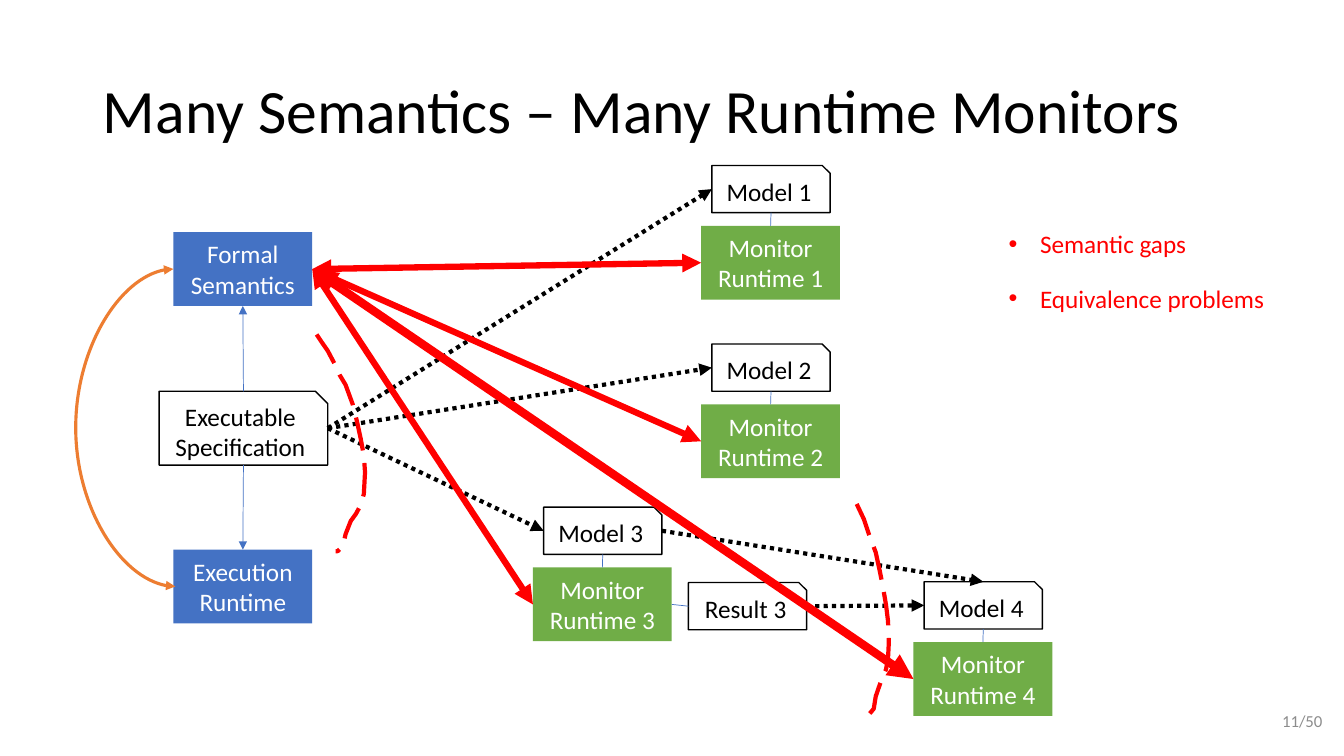
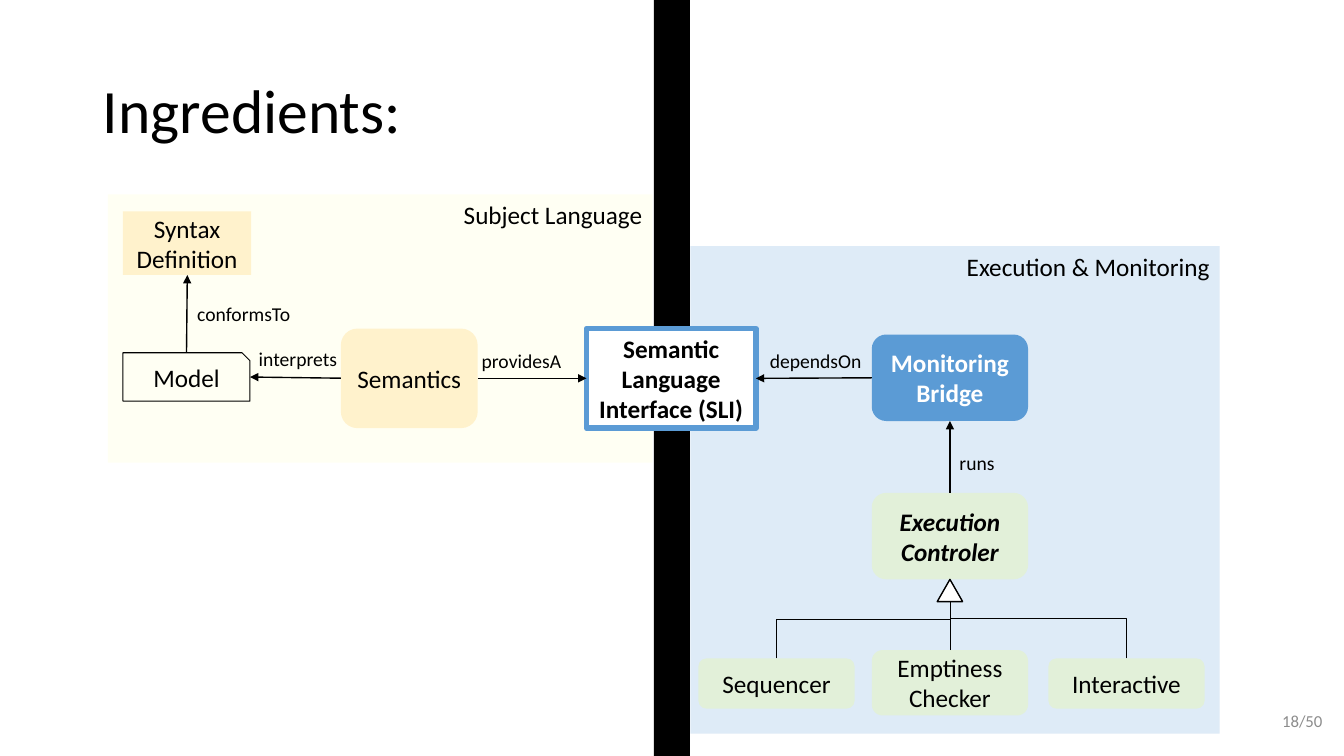
from lxml.etree import SubElement
from pptx import Presentation
from pptx.dml.color import RGBColor
from pptx.enum.dml import MSO_LINE
from pptx.enum.shapes import MSO_CONNECTOR, MSO_SHAPE
from pptx.enum.text import MSO_ANCHOR, MSO_AUTO_SIZE, PP_ALIGN
from pptx.oxml.ns import qn
from pptx.util import Cm, Pt

INK = {
    "black": "000000", "white": "FFFFFF", "gray": "8C8C8C", "red": "FF0000",
    "blue": "4472C4", "orange": "ED7D31", "green": "70AD47", "sky": "5B9BD5",
    "ice": "DEEBF7", "ivory": "FFFFF3", "cream": "FFF2CC", "mint": "E2F0D9",
}
FONT = "Calibri"
RECT, ROUND = MSO_SHAPE.RECTANGLE, MSO_SHAPE.ROUNDED_RECTANGLE
SNIP = MSO_SHAPE.SNIP_1_RECTANGLE
TEXT, FREE = "text", "free"
TOP, LEFT, BASE, RIGHT = range(4)
MID = MSO_ANCHOR.MIDDLE


def box(slide, kind, at, text="", fill=None, line=None, wide=1, ink="black",
        size=18, bold=False, slant=False, align=PP_ALIGN.CENTER, anchor=MID, pad=0.25):
    if kind == FREE:
        spots = [(Cm(x), Cm(y)) for x, y in at]
        pen = slide.shapes.build_freeform(*spots[0])
        pen.add_line_segments(spots[1:], close=False)
        shape = pen.convert_to_shape()
    elif kind == TEXT:
        shape = slide.shapes.add_textbox(*map(Cm, at))
    else:
        shape = slide.shapes.add_shape(kind, *map(Cm, at))
    if kind != TEXT:
        shape.shadow.inherit = False
    if fill:
        shape.fill.solid()
        shape.fill.fore_color.rgb = RGBColor.from_string(INK[fill])
    else:
        shape.fill.background()
    if line:
        shape.line.color.rgb = RGBColor.from_string(INK[line])
        shape.line.width = Pt(wide)
    else:
        shape.line.fill.background()
    frame = shape.text_frame
    frame.word_wrap = True
    frame.vertical_anchor = anchor
    frame.margin_left = frame.margin_right = Cm(pad)
    for n, row in enumerate(text.split("\n") if text else []):
        para = frame.add_paragraph() if n else frame.paragraphs[0]
        para.alignment = align
        run = para.add_run()
        run.text = row
        font = run.font
        font.name, font.size, font.bold, font.italic = FONT, Pt(size), bold, slant
        font.color.rgb = RGBColor.from_string(INK[ink])
    return shape


def link(slide, ends, ink="black", wide=1, heads=("tailEnd",), dash=None,
         kind=MSO_CONNECTOR.STRAIGHT):
    if hasattr(ends[0], "shape_id"):
        wire = slide.shapes.add_connector(kind, 0, 0, 0, 0)
        wire.begin_connect(*ends[:2])
        wire.end_connect(*ends[2:])
    else:
        wire = slide.shapes.add_connector(kind, *map(Cm, ends))
    wire.line.color.rgb = RGBColor.from_string(INK[ink])
    wire.line.width = Pt(wide)
    if dash:
        wire.line.dash_style = dash
    props = wire._element.spPr
    for head in heads:
        SubElement(props.find(qn("a:ln")), qn("a:" + head), type="triangle")
    SubElement(props, qn("a:effectLst"))
    return wire


deck = Presentation()
deck.slide_width, deck.slide_height = Cm(33.87), Cm(19.05)
pages = []
for name, num in [("Many Semantics – Many Runtime Monitors", "11/50"),
                  ("Ingredients:", "18/50")]:
    page = deck.slides.add_slide(deck.slide_layouts[5])
    title = page.shapes.title
    title.left, title.top, title.width, title.height = map(Cm, (2.34, 1.02, 29.21, 3.68))
    frame = title.text_frame
    frame.auto_size = MSO_AUTO_SIZE.NONE
    frame.word_wrap = True
    frame.vertical_anchor = MID
    para = frame.paragraphs[0]
    para.alignment = PP_ALIGN.LEFT
    para.line_spacing = 0.9
    run = para.add_run()
    run.text = name
    run.font.name, run.font.size = FONT, Pt(44)
    run.font.color.rgb = RGBColor.from_string(INK["black"])
    box(page, TEXT, (31.83, 17.65, 1.75, 1.02), num, ink="gray", size=12,
        align=PP_ALIGN.RIGHT)
    pages.append(page)
many, parts = pages

formal = box(many, RECT, (4.37, 5.85, 3.5, 1.86), "Formal\nSemantics", "blue", ink="white")
engine = box(many, RECT, (4.37, 13.85, 3.5, 1.86), "Execution\nRuntime", "blue", ink="white")
plan = box(many, SNIP, (4.01, 9.86, 4.25, 1.86), "Executable\nSpecification", line="black")

models, runs = [], []
for n, (x, y) in enumerate([(17.67, 5.69), (17.67, 10.19), (13.43, 14.3), (23.02, 16.18)], 1):
    runs.append(box(many, RECT, (x, y, 3.5, 1.86), f"Monitor\nRuntime {n}", "green", ink="white"))
    models.append(box(many, SNIP, (x + 0.27, y - 1.52, 2.98, 1.19), f"Model {n}", line="black"))
    link(many, (models[-1], BASE, runs[-1], TOP), "blue", 0.5, ())
result = box(many, SNIP, (17.35, 14.68, 2.98, 1.19), "Result 3", line="black")

link(many, (plan, TOP, formal, BASE), "blue", 0.5)
link(many, (plan, BASE, engine, TOP), "blue", 0.5)
link(many, (runs[2], RIGHT, result, LEFT), "blue", 0.5, ())
both = ("headEnd", "tailEnd")
arc = link(many, (4.42, 14.78, 4.37, 6.78), "orange", 2.25, both, kind=MSO_CONNECTOR.CURVE)
bend = arc._element.spPr.find(qn("a:prstGeom")).find(qn("a:avLst"))
SubElement(bend, qn("a:gd"), name="adj1", fmla="val 5020000")

for ends in [(plan, RIGHT, models[0], LEFT), (plan, RIGHT, models[1], LEFT),
             (plan, RIGHT, models[2], LEFT), (models[2], RIGHT, models[3], TOP),
             (result, RIGHT, models[3], LEFT)]:
    link(many, ends, wide=3, dash=MSO_LINE.ROUND_DOT)
for run, wide in zip(runs, (4.5, 4.5, 4.5, 6)):
    link(many, (run, LEFT, formal, RIGHT), "red", wide, both)

for trail in [
    [(7.98, 8.43), (8.1, 8.61), (8.26, 8.84), (8.46, 9.22), (8.56, 9.45), (8.71, 9.7),
     (8.89, 10.19), (8.99, 10.59), (9.09, 11.05), (9.17, 11.48), (9.2, 11.9),
     (9.17, 12.45), (9.09, 12.73), (8.97, 12.95), (8.84, 13.13), (8.71, 13.46),
     (8.64, 13.77), (8.51, 13.89), (8.46, 13.89)],
    [(21.59, 12.7), (21.77, 13.08), (21.89, 13.44), (22.07, 13.92), (22.17, 14.38),
     (22.25, 14.78), (22.33, 15.24), (22.38, 15.65), (22.4, 16.2), (22.38, 16.59),
     (22.33, 16.87), (22.23, 17.09), (22.15, 17.32), (22.07, 17.55), (22.02, 17.86),
     (21.92, 17.98)],
]:
    box(many, FREE, trail, line="red", wide=3).line.dash_style = MSO_LINE.LONG_DASH

for y, text in [(5.64, "Semantic gaps"), (7.01, "Equivalence problems")]:
    note = box(many, TEXT, (25.17, y, 8.66, 1.02), text, ink="red",
               align=PP_ALIGN.LEFT, anchor=MSO_ANCHOR.TOP)
    props = note.text_frame.paragraphs[0]._p.get_or_add_pPr()
    props.set("marL", str(Cm(0.79)))
    props.set("indent", str(-Cm(0.79)))
    SubElement(props, qn("a:buFont"), typeface="Arial")
    SubElement(props, qn("a:buChar"), char="•")

box(parts, RECT, (16.48, 0, 0.91, 19.05), fill="black")
for at, text, fill in [((17.4, 6.2, 13.34, 12.29), "Execution & Monitoring", "ice"),
                       ((2.72, 4.9, 13.72, 6.76), "Subject Language", "ivory")]:
    box(parts, RECT, at, text, fill, align=PP_ALIGN.RIGHT, anchor=MSO_ANCHOR.TOP)

sli = box(parts, RECT, (14.78, 8.28, 4.27, 2.51), "Semantic\nLanguage\nInterface (SLI)",
          "white", "sky", 4, bold=True)
bridge = box(parts, ROUND, (21.97, 8.43, 3.94, 2.18), "Monitoring\nBridge", "sky",
             ink="white", bold=True)
sense = box(parts, ROUND, (8.59, 8.28, 3.45, 2.51), "Semantics", "cream")
box(parts, RECT, (3.1, 5.33, 3.23, 1.6), "Syntax\nDefinition", "cream")
box(parts, FREE, [(3.1, 8.89), (6.1, 8.89), (6.3, 9.09), (6.3, 10.11), (3.1, 10.11),
                  (3.1, 8.89)], "Model", line="black", wide=0.75)
guide = box(parts, ROUND, (21.97, 12.42, 3.94, 2.18), "Execution\nControler", "mint",
            bold=True, slant=True, pad=0)

for ends in [(4.7, 8.89, 4.72, 6.93), (8.59, 9.53, 6.3, 9.5), (sense, RIGHT, sli, LEFT),
             (bridge, LEFT, sli, RIGHT), (guide, TOP, bridge, BASE)]:
    link(parts, ends)

for x, y, high, text in [(17.6, 16.59, 1.27, "Sequencer"),
                         (21.97, 16.38, 1.65, "Emptiness\nChecker"),
                         (26.42, 16.59, 1.27, "Interactive")]:
    leaf = box(parts, ROUND, (x, y, 3.94, high), text, "mint", pad=0)
    ends = (leaf, TOP, guide, BASE)
    if leaf.left == guide.left:
        link(parts, ends, wide=0.5)
        continue
    wire = link(parts, ends, wide=0.5, kind=MSO_CONNECTOR.ELBOW)
    shift = (wire.width - wire.height) // 2
    wire.left, wire.top = wire.left + shift, wire.top - shift
    wire.width, wire.height = wire.height, wire.width
    frame = wire._element.spPr.find(qn("a:xfrm"))
    frame.set("rot", str(270 * 60000))
    frame.set("flipH", "0")
    frame.set("flipV", str(int(leaf.left > guide.left)))
box(parts, MSO_SHAPE.ISOSCELES_TRIANGLE, (23.62, 14.6, 0.64, 0.56), fill="white", line="black")

for x, y, wide, text in [(11.89, 8.66, 2.8, "providesA"), (4.72, 7.49, 3.1, "conformsTo"),
                         (6.27, 8.61, 2.8, "interprets"), (19.15, 8.66, 3.1, "dependsOn"),
                         (23.93, 11.23, 1.7, "runs")]:
    box(parts, TEXT, (x, y, wide, 0.86), text, size=14, align=PP_ALIGN.LEFT,
        anchor=MSO_ANCHOR.TOP)

deck.save("out.pptx")
